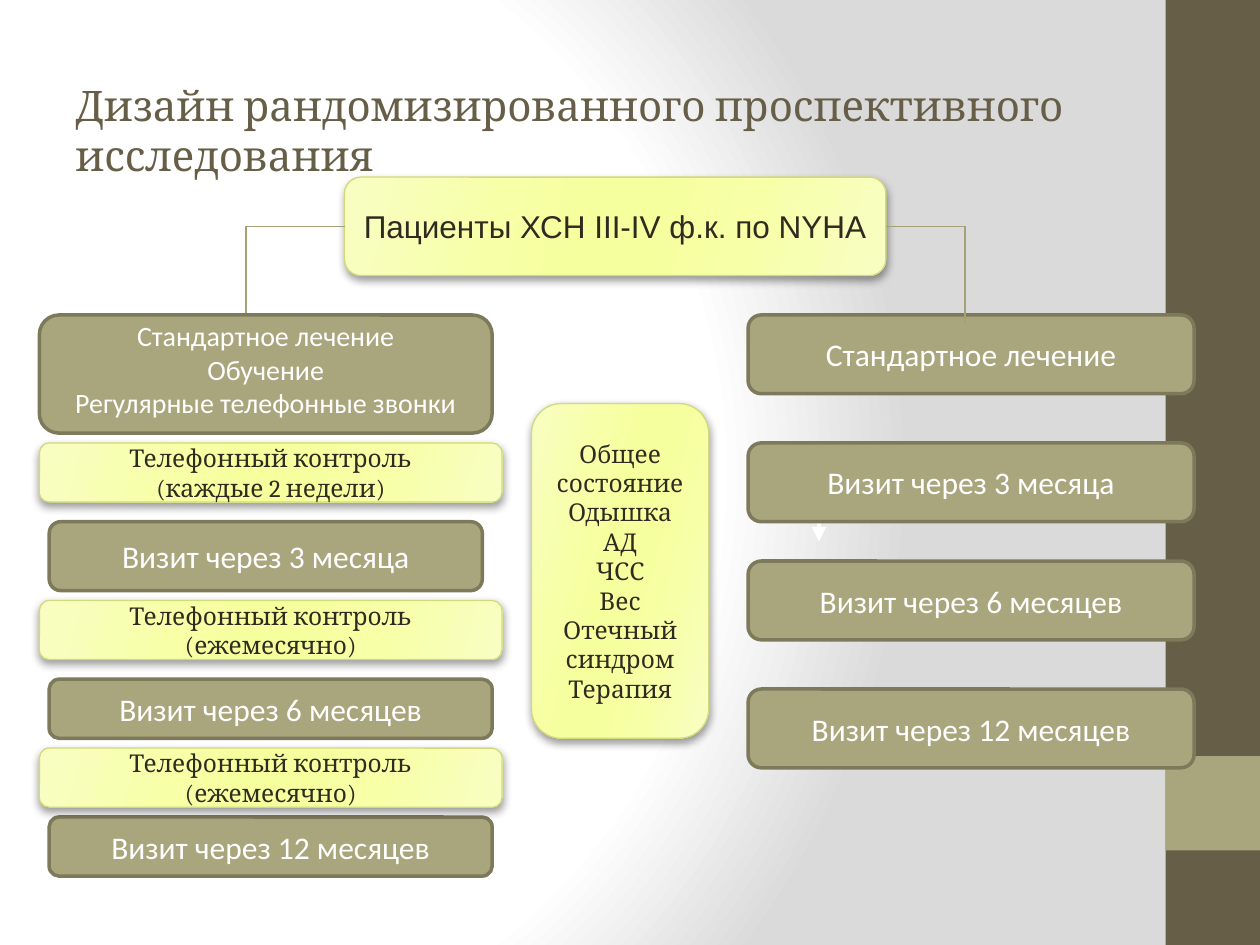
"""Build a slide showing the design of a randomised prospective study."""
from lxml import etree
from pptx import Presentation
from pptx.dml.color import RGBColor
from pptx.enum.shapes import MSO_CONNECTOR as LINK, MSO_SHAPE as SHAPE
from pptx.enum.text import MSO_ANCHOR as ANCHOR, PP_ALIGN as ALIGN
from pptx.oxml import parse_xml
from pptx.oxml.ns import nsdecls, qn
from pptx.util import Inches, Pt

COLUMNS, ROWS = 128, 96
UNIT = Inches(10) / COLUMNS
BROWN, OLIVE, OLIVE_EDGE = "675E47", "A9A57C", "7D7A5C"
LIME_EDGE, LINK_COLOR, INK, WHITE = "D2DA7A", "A6A278", "2F2B20", "FFFFFF"
LIME_STOPS = [(0, "F8FEC2"), (30, "F7FFA7"), (45, "F6FF9D"),
              (55, "F6FF9D"), (73, "F7FFA7"), (100, "F8FEC2")]
PAGE_STOPS = [(0, WHITE), (75, WHITE), (100, "DADADA")]
LINEAR = '<a:lin ang="900000" scaled="0"/>'
CIRCLE = ('<a:path path="circle"><a:fillToRect l="20000" t="50000" '
          'r="100000" b="50000"/></a:path>')


def grid(*cells):
    """Turn grid cells into slide lengths."""
    return [round(cell * UNIT) for cell in cells]


def color(code):
    """Return the colour of a hex string."""
    return RGBColor.from_string(code)


def shade(holder, stops, direction):
    """Replace the solid fill inside an element by a gradient."""
    marks = "".join(f'<a:gs pos="{share * 1000}"><a:srgbClr val="{code}"/></a:gs>'
                    for share, code in stops)
    gradient = parse_xml(f'<a:gradFill {nsdecls("a")} rotWithShape="1">'
                         f'<a:gsLst>{marks}</a:gsLst>{direction}</a:gradFill>')
    holder.replace(holder.find(qn("a:solidFill")), gradient)


def add_shadow(shape):
    """Give a shape a soft shadow below it."""
    effects = shape._element.spPr.find(qn("a:effectLst"))
    effects.append(parse_xml(
        f'<a:outerShdw {nsdecls("a")} blurRad="63500" dist="26670" dir="5400000" '
        'rotWithShape="0"><a:srgbClr val="000000"><a:alpha val="40000"/>'
        '</a:srgbClr></a:outerShdw>'))


def write(frame, lines, font, size, code, align):
    """Write one paragraph per line in a single style."""
    frame.word_wrap = True
    frame.text = "\n".join(lines)
    for para in frame.paragraphs:
        para.alignment = align
        para.font.name, para.font.size = font, Pt(size)
        para.font.color.rgb = color(code)


def add_block(page, cells, fill, kind=SHAPE.RECTANGLE, edge=None, width=2):
    """Add a filled shape with an optional outline."""
    block = page.shapes.add_shape(kind, *grid(*cells))
    block.shadow.inherit = False
    block.fill.solid()
    block.fill.fore_color.rgb = color(fill)
    if edge:
        block.line.color.rgb = color(edge)
        block.line.width = Pt(width)
    else:
        block.line.fill.background()
    return block


def label(box, lines, font, size, code, bottom=0):
    """Centre lines of text in a box."""
    frame = box.text_frame
    frame.margin_top, frame.margin_bottom = 0, Inches(bottom)
    frame.vertical_anchor = ANCHOR.MIDDLE
    write(frame, lines, font, size, code, ALIGN.CENTER)


def add_step(page, cells, lines, size=18, bottom=0):
    """Add an olive box for a treatment or a visit."""
    box = add_block(page, cells, OLIVE, SHAPE.ROUNDED_RECTANGLE, OLIVE_EDGE)
    label(box, lines, "Calibri", size, WHITE, bottom)


def add_note(page, cells, lines, font="Cambria", size=14):
    """Add a shaded lime box."""
    box = add_block(page, cells, LIME_STOPS[0][1], SHAPE.ROUNDED_RECTANGLE,
                    LIME_EDGE, 0.75)
    shade(box._element.spPr, LIME_STOPS, LINEAR)
    add_shadow(box)
    label(box, lines, font, size, INK)
    return box


def add_link(page, start, end, code=LINK_COLOR, width=1, arrow=False):
    """Add a straight line between two grid points."""
    link = page.shapes.add_connector(LINK.STRAIGHT, *grid(*start, *end))
    link.line.color.rgb = color(code)
    link.line.width = Pt(width)
    if arrow:
        etree.SubElement(link.line._get_or_add_ln(), qn("a:tailEnd"), type="triangle")
    etree.SubElement(link._element.spPr, qn("a:effectLst"))
    return link


def add_backdrop(page):
    """Shade the page and add the bars on its right edge."""
    page.background.fill.solid()
    shade(page._element.cSld.bg.bgPr, PAGE_STOPS, CIRCLE)
    add_block(page, (118.4, 0, 9.6, ROWS), BROWN)
    add_block(page, (118.4, 76.8, 9.6, 9.6), OLIVE)


def add_title(page):
    """Add the slide's heading."""
    box = page.shapes.add_textbox(*grid(6.4, 7.4, 115.2, 11))
    write(box.text_frame, ["Дизайн рандомизированного проспективного исследования"],
          "Cambria", 24, BROWN, ALIGN.LEFT)


def add_control_arm(page):
    """Add the right column with standard treatment."""
    steps = [(32, "Стандартное лечение"), (45, "Визит через 3 месяца"),
             (57, "Визит через 6 месяцев"), (70, "Визит через 12 месяцев")]
    for row, text in steps:
        add_step(page, (76, row, 45.3, 8), [text])


def add_active_arm(page):
    """Add the left column with training and phone calls."""
    add_step(page, (4, 32, 46, 12), ["Стандартное лечение", "Обучение",
                                     "Регулярные телефонные звонки"], 16, 0.08)
    visits = [(53, 44, 7, 3, "месяца"), (69, 45, 6, 6, "месяцев"),
              (83, 45, 6, 12, "месяцев")]
    for row, width, height, count, unit in visits:
        add_step(page, (5, row, width, height), [f"Визит через {count} {unit}"])
    calls = [(45, ["Телефонный контроль", "(каждые 2 недели)"]),
             (61, ["Телефонный контроль (ежемесячно)"]),
             (76, ["Телефонный контроль (ежемесячно)"])]
    for row, lines in calls:
        add_note(page, (4, row, 47, 6), lines)


def add_branches(page, patients):
    """Link the patients' box to both arms."""
    for side, inner, outer, foot in ((1, 35, 25, 32.8), (3, 90, 98, 33)):
        add_link(page, (inner, 23), (outer, 23)).begin_connect(patients, side)
        add_link(page, (outer, 23), (outer, foot))


def main():
    """Build and save the slide."""
    deck = Presentation()
    deck.slide_width, deck.slide_height = grid(COLUMNS, ROWS)
    page = deck.slides.add_slide(deck.slide_layouts[6])
    add_backdrop(page)
    patients = add_note(page, (35, 18, 55, 10), ["Пациенты ХСН III-IV ф.к. по NYНA"],
                        "Arial", 18)
    add_link(page, (83.2, 50), (83.2, 55), WHITE, 2.75, arrow=True)
    add_control_arm(page)
    add_branches(page, patients)
    add_active_arm(page)
    add_note(page, (54, 41, 18, 34), ["Общее состояние", "Одышка", "АД", "ЧСС", "Вес",
                                      "Отечный синдром", "Терапия"])
    add_title(page)
    deck.save("out.pptx")


if __name__ == "__main__":
    main()
